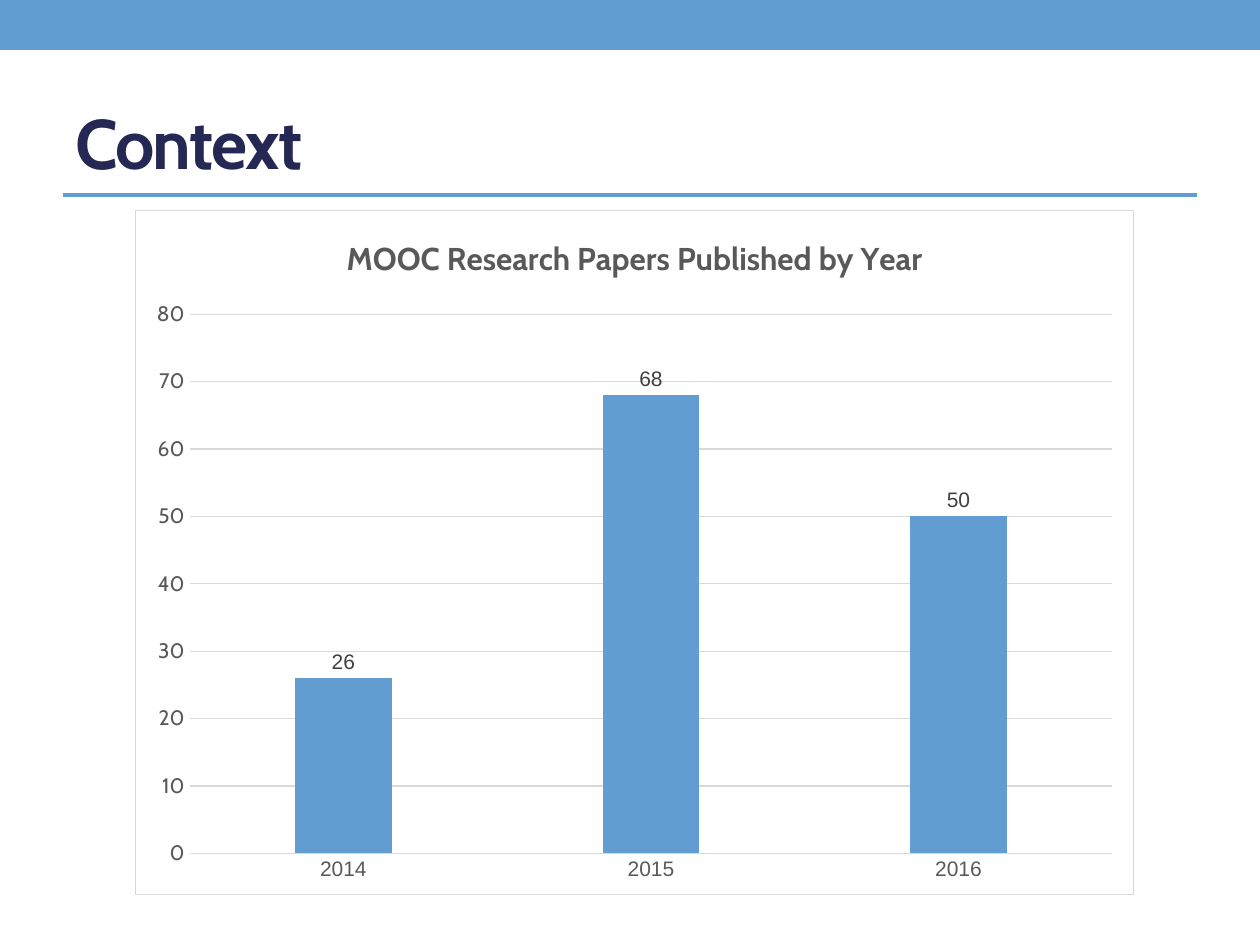
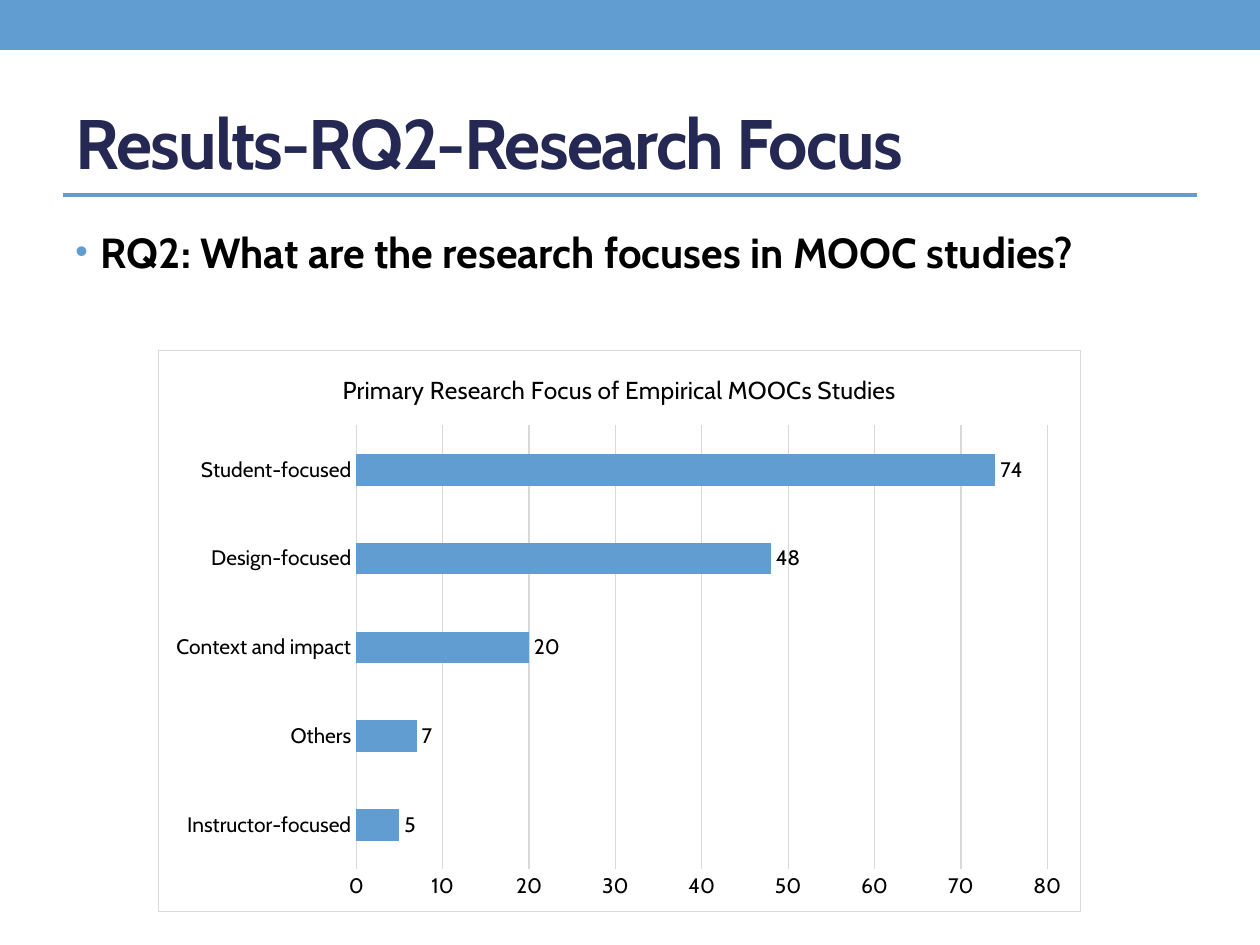
from lxml import etree
from pptx import Presentation
from pptx.chart.data import CategoryChartData
from pptx.dml.color import RGBColor
from pptx.enum.chart import XL_CHART_TYPE, XL_LABEL_POSITION, XL_TICK_MARK
from pptx.enum.shapes import MSO_CONNECTOR, MSO_SHAPE
from pptx.enum.text import MSO_ANCHOR
from pptx.oxml import parse_xml
from pptx.oxml.ns import nsdecls, qn
from pptx.util import Pt

COLUMN, BAR = XL_CHART_TYPE.COLUMN_CLUSTERED, XL_CHART_TYPE.BAR_CLUSTERED
OUTSIDE_END = XL_LABEL_POSITION.OUTSIDE_END
NO_TICK = XL_TICK_MARK.NONE
RECTANGLE, STRAIGHT = MSO_SHAPE.RECTANGLE, MSO_CONNECTOR.STRAIGHT
MIDDLE, TOP = MSO_ANCHOR.MIDDLE, MSO_ANCHOR.TOP

PX = 914400 / 126
COLORS = {"accent": "629DD1", "title": "242852", "text": "000000", "grid": "D9D9D9",
          "gray": "595959", "label": "404040", "white": "FFFFFF"}
HEAD_FONT, PLAIN_FONT = "Cabin", "Arial"

# Fonts are (size, colour, typeface, bold); boxes are left, top, width, height in px.
DARK = (12, "text", HEAD_FONT, False)
SLIDES = [
    {"title": "Context",
     "chart": {
         "type": COLUMN, "box": (135, 210, 999, 685), "plot": (189, 314, 924, 540),
         "title": "MOOC Research Papers Published by Year",
         "data": {"2014": 26, "2015": 68, "2016": 50},
         "gap": 219, "overlap": -27,
         "title_font": (18, "gray", HEAD_FONT, True),
         "cat_font": (12, "gray", PLAIN_FONT, False),
         "val_font": (12, "gray", HEAD_FONT, False),
         "label_font": (12, "label", PLAIN_FONT, False)}},
    {"title": "Results-RQ2-Research Focus",
     "bullet": "RQ2: What are the research focuses in MOOC studies?",
     "chart": {
         "type": BAR, "box": (158, 350, 923, 562), "plot": (356, 425, 692, 445),
         "title": "Primary Research Focus of Empirical MOOCs Studies",
         "data": {"Instructor-focused": 5, "Others": 7, "Context and impact": 20,
                  "Design-focused": 48, "Student-focused": 74},
         "gap": 182, "overlap": 0,
         "title_font": (14, "text", HEAD_FONT, False),
         "cat_font": DARK, "val_font": DARK, "label_font": DARK}},
]


def px(*lengths):
    return [round(n * PX) for n in lengths]


def rgb(name):
    return RGBColor.from_string(COLORS[name])


def set_font(font, size, color, face, bold):
    font.size, font.name, font.bold = Pt(size), face, bold
    font.color.rgb = rgb(color)


def add_text(slide, box, text, font, anchor):
    tf = slide.shapes.add_textbox(*px(*box)).text_frame
    tf.word_wrap, tf.vertical_anchor = True, anchor
    p = tf.paragraphs[0]
    p.text = text
    set_font(p.font, *font)
    return p


def add_frame(slide, title):
    """Add the top band, the rule and the slide title."""
    band = slide.shapes.add_shape(RECTANGLE, *px(0, 0, 1260, 50))
    band.shadow.inherit = False
    band.fill.solid()
    band.fill.fore_color.rgb = rgb("accent")
    band.line.fill.background()
    rule = slide.shapes.add_connector(STRAIGHT, *px(63, 195, 1197, 195))
    rule.line.color.rgb = rgb("accent")
    rule.line.width = Pt(2.08)
    etree.SubElement(rule._element.spPr, qn("a:effectLst"))
    p = add_text(slide, (63, 73, 1134, 136), title, (40, "title", HEAD_FONT, True), MIDDLE)
    p.runs[0].font._element.set("spc", "-100")


def add_bullet(slide, text):
    p = add_text(slide, (63, 220, 1179, 672), text, (24, "text", HEAD_FONT, True), TOP)
    pPr = p._p.get_or_add_pPr()
    pPr.set("marL", "182880")
    pPr.set("indent", "-182880")
    marks = (f'<a:buClr {nsdecls("a")}><a:srgbClr val="{COLORS["accent"]}"/></a:buClr>',
             f'<a:buSzPct {nsdecls("a")} val="85000"/>',
             f'<a:buFont {nsdecls("a")} typeface="{PLAIN_FONT}"/>',
             f'<a:buChar {nsdecls("a")} char="•"/>')
    for i, mark in enumerate(marks):
        pPr.insert(i, parse_xml(mark))


def place_plot(chart, box, plot):
    """Fix the inner plot area, given in slide px, as fractions of the chart."""
    left, top, width, height = box
    x, y, w, h = plot
    parts = {"x": (x - left) / width, "y": (y - top) / height, "w": w / width, "h": h / height}
    values = "".join(f'<c:{k}Mode val="edge"/>' for k in "xy")
    values += "".join(f'<c:{k} val="{v:.4f}"/>' for k, v in parts.items())
    area = chart.element.find(".//" + qn("c:plotArea"))
    for old in area.findall(qn("c:layout")):
        area.remove(old)
    area.insert(0, parse_xml(
        f'<c:layout {nsdecls("c")}><c:manualLayout><c:layoutTarget val="inner"/>'
        f'{values}</c:manualLayout></c:layout>'))


def add_border(chart):
    chart.element.find(qn("c:chart")).addnext(parse_xml(
        f'<c:spPr {nsdecls("c", "a")}>'
        f'<a:solidFill><a:srgbClr val="{COLORS["white"]}"/></a:solidFill>'
        f'<a:ln w="9525"><a:solidFill><a:srgbClr val="{COLORS["grid"]}"/></a:solidFill></a:ln>'
        '</c:spPr>'))


def style_axes(chart, cat_font, val_font):
    cat, val = chart.category_axis, chart.value_axis
    for axis, font in ((cat, cat_font), (val, val_font)):
        axis.major_tick_mark = axis.minor_tick_mark = NO_TICK
        set_font(axis.tick_labels.font, *font)
    val.minimum_scale, val.maximum_scale, val.major_unit = 0, 80, 10
    val.has_major_gridlines = True
    val.format.line.fill.background()
    for line in (cat.format.line, val.major_gridlines.format.line):
        line.color.rgb = rgb("grid")
        line.width = Pt(0.75)


def add_bar_chart(slide, c):
    data = CategoryChartData()
    data.categories = list(c["data"])
    data.add_series("Series 1", list(c["data"].values()))
    chart = slide.shapes.add_chart(c["type"], *px(*c["box"]), data).chart
    set_font(chart.font, *c["cat_font"])
    chart.has_legend = False
    chart.has_title = True
    p = chart.chart_title.text_frame.paragraphs[0]
    p.text = c["title"]
    set_font(p.font, *c["title_font"])
    set_font(p.runs[0].font, *c["title_font"])
    chart.chart_title.include_in_layout = False

    plot = chart.plots[0]
    plot.vary_by_categories = False
    plot.gap_width, plot.overlap = c["gap"], c["overlap"]
    fill = plot.series[0].format.fill
    fill.solid()
    fill.fore_color.rgb = rgb("accent")
    plot.has_data_labels = True
    labels = plot.data_labels
    labels.show_value, labels.position = True, OUTSIDE_END
    set_font(labels.font, *c["label_font"])

    style_axes(chart, c["cat_font"], c["val_font"])
    place_plot(chart, c["box"], c["plot"])
    add_border(chart)


def main():
    prs = Presentation()
    prs.slide_width, prs.slide_height = px(1260, 945)
    for content in SLIDES:
        slide = prs.slides.add_slide(prs.slide_layouts[6])
        add_frame(slide, content["title"])
        if "bullet" in content:
            add_bullet(slide, content["bullet"])
        add_bar_chart(slide, content["chart"])
    prs.save("out.pptx")


if __name__ == "__main__":
    main()
